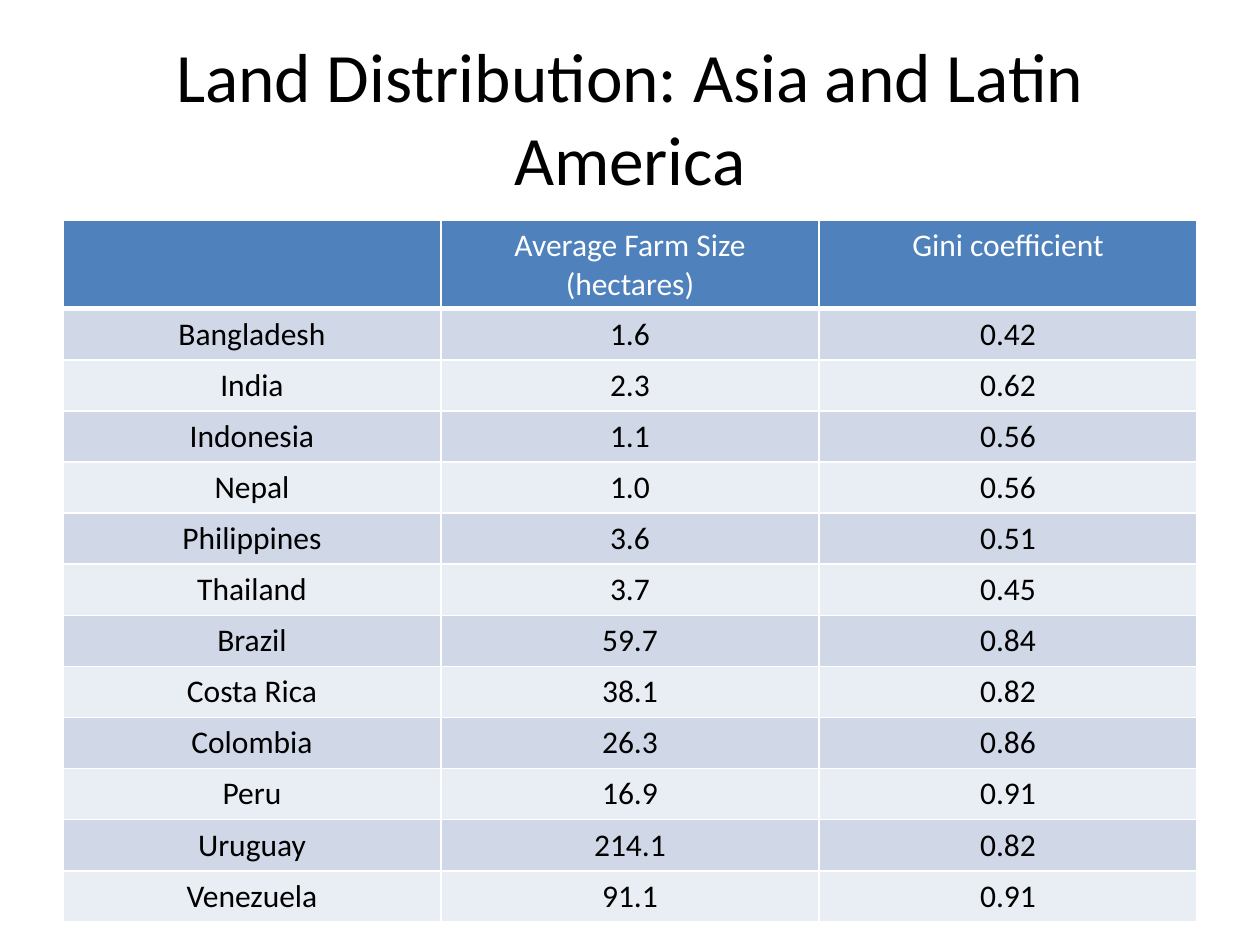
"""Build a slide with a table of land distribution in Asia and Latin America."""
from typing import Any, NamedTuple

from lxml.etree import SubElement
from pptx import Presentation
from pptx.dml.color import RGBColor
from pptx.enum.text import MSO_ANCHOR, PP_ALIGN
from pptx.oxml.ns import qn
from pptx.util import Inches, Pt

WHITE, BLACK = "FFFFFF", "000000"
HEADER_FILL = "4F81BD"
BAND_FILLS = ("D0D8E8", "E9EDF4")
HEADER_HEIGHT, BODY_HEIGHT = 0.7, 4.87


class Land(NamedTuple):
    country: str
    farm_size: str
    gini: str


HEADER = Land("", "Average Farm Size (hectares)", "Gini coefficient")
LANDS = [
    Land("Bangladesh", "1.6", "0.42"),
    Land("India", "2.3", "0.62"),
    Land("Indonesia", "1.1", "0.56"),
    Land("Nepal", "1.0", "0.56"),
    Land("Philippines", "3.6", "0.51"),
    Land("Thailand", "3.7", "0.45"),
    Land("Brazil", "59.7", "0.84"),
    Land("Costa Rica", "38.1", "0.82"),
    Land("Colombia", "26.3", "0.86"),
    Land("Peru", "16.9", "0.91"),
    Land("Uruguay", "214.1", "0.82"),
    Land("Venezuela", "91.1", "0.91"),
]


def rgb(value: str) -> RGBColor:
    return RGBColor.from_string(value)


def write(tf: Any, text: str, size: float, color: str) -> None:
    p = tf.paragraphs[0]
    p.alignment = PP_ALIGN.CENTER
    formats = {"name": "Calibri", "size": Pt(size), "bold": False}
    if not text:
        p.font.size = Pt(size)
        return
    r = p.add_run()
    r.text = text
    for name, value in formats.items():
        setattr(r.font, name, value)
    r.font.color.rgb = rgb(color)


def add_borders(cell: Any, bottom: float) -> None:
    tc_pr = cell._tc.get_or_add_tcPr()
    for side, width in {"L": 1, "R": 1, "T": 1, "B": bottom}.items():
        ln = SubElement(tc_pr, qn(f"a:ln{side}"), w=str(Pt(width)))
        SubElement(SubElement(ln, qn("a:solidFill")), qn("a:srgbClr"), val=WHITE)


def fill_row(row: Any, land: Land, fill: str, color: str, bottom: float = 1) -> None:
    for cell, text in zip(row.cells, land):
        write(cell.text_frame, text, 18, color)
        add_borders(cell, bottom)
        cell.fill.solid()
        cell.fill.fore_color.rgb = rgb(fill)


def add_title(s: Any, text: str) -> None:
    box = s.shapes.add_textbox(Inches(0.5), Inches(0.3), Inches(9), Inches(1.25))
    tf = box.text_frame
    tf.word_wrap = True
    tf.vertical_anchor = MSO_ANCHOR.MIDDLE
    write(tf, text, 39.6, BLACK)


def add_land_table(s: Any) -> None:
    frame = s.shapes.add_table(
        len(LANDS) + 1, len(HEADER), Inches(0.5), Inches(1.75),
        Inches(9), Inches(HEADER_HEIGHT + BODY_HEIGHT))
    header, *body = frame.table.rows
    header.height = Inches(HEADER_HEIGHT)
    fill_row(header, HEADER, HEADER_FILL, WHITE, bottom=3)
    for i, (row, land) in enumerate(zip(body, LANDS)):
        row.height = Inches(BODY_HEIGHT / len(LANDS))
        fill_row(row, land, BAND_FILLS[i % 2], BLACK)


def main() -> None:
    prs = Presentation()
    prs.slide_width, prs.slide_height = Inches(10), Inches(7.5)
    s = prs.slides.add_slide(prs.slide_layouts[6])
    add_title(s, "Land Distribution: Asia and Latin America")
    add_land_table(s)
    prs.save("out.pptx")


if __name__ == "__main__":
    main()
